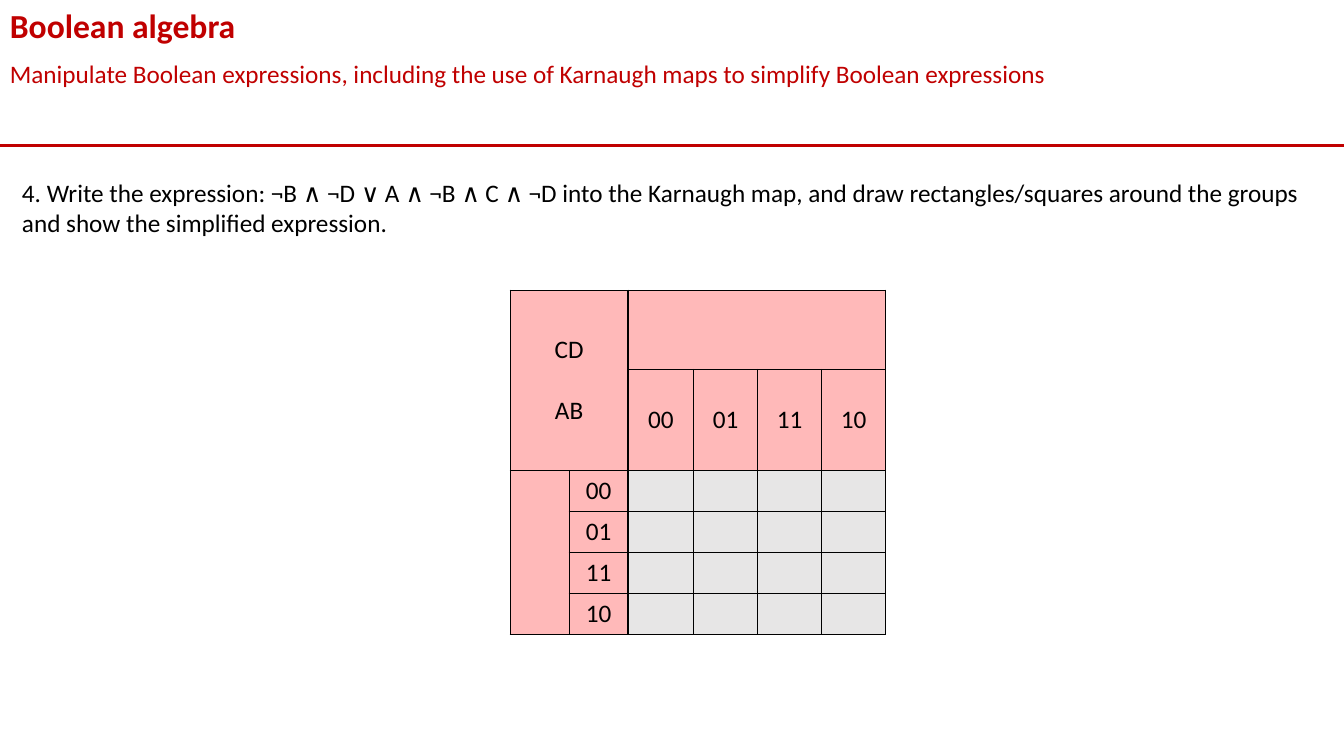
"""Build a Boolean algebra slide with an empty Karnaugh map to fill in."""
import pptx
import pptx.dml.color
import pptx.enum.shapes
import pptx.enum.text
import pptx.oxml
import pptx.util
from lxml import etree

COLUMNS, ROWS = 133.3, 75
UNIT = pptx.util.Inches(0.1)
RED, BLACK, PINK, GREY = "C00000", "000000", "FFB9B9", "E7E6E6"
GRAY_CODE = ["00", "01", "11", "10"]
COLUMN_WIDTHS = [5.85, 5.85, 6.5, 6.35, 6.35, 6.35]
ROW_HEIGHTS = [7.85, 10] + [4.06] * 4
HEADERS = 2
MERGES = [((0, 0), (1, 1)), ((0, 2), (0, 5)), ((2, 0), (5, 0))]
BODY = {"name": "Calibri", "size": pptx.util.Pt(18)}


def grid(count):
    """Turn a number of grid units into a length."""
    return pptx.util.Emu(round(count * UNIT))


def color(value):
    """Turn a hex string into a colour."""
    return pptx.dml.color.RGBColor.from_string(value)


def set_values(target, values):
    """Set each attribute named in the dict."""
    for name, value in values.items():
        setattr(target, name, value)


def write(paragraph, text, fill=BLACK, **formats):
    """Write formatted text in a paragraph."""
    run = paragraph.add_run()
    run.text = text
    set_values(run.font, {**BODY, **formats})
    run.font.color.rgb = color(fill)


def add_text(slide, text, left, top, width, height, **formats):
    """Add a wrapping text box measured in grid units."""
    box = slide.shapes.add_textbox(*map(grid, (left, top, width, height)))
    box.text_frame.word_wrap = True
    write(box.text_frame.paragraphs[0], text, **formats)


def add_rule(slide, top):
    """Add a red line across the whole slide."""
    line = slide.shapes.add_connector(
        pptx.enum.shapes.MSO_CONNECTOR.STRAIGHT, 0, grid(top), grid(COLUMNS), grid(top))
    line.line.color.rgb = color(RED)
    line.line.width = pptx.util.Pt(2.25)
    etree.SubElement(line._element.spPr, pptx.oxml.ns.qn("a:effectLst"))


def style_cell(cell, fill):
    """Give a cell black borders, a fill and centred text."""
    properties = cell._tc.get_or_add_tcPr()
    for side in ("lnL", "lnR", "lnT", "lnB"):
        border = etree.SubElement(
            properties, pptx.oxml.ns.qn(f"a:{side}"), w=str(pptx.util.Pt(1)))
        solid = etree.SubElement(border, pptx.oxml.ns.qn("a:solidFill"))
        etree.SubElement(solid, pptx.oxml.ns.qn("a:srgbClr"), val=BLACK)
    cell.fill.solid()
    cell.fill.fore_color.rgb = color(fill)
    cell.vertical_anchor = pptx.enum.text.MSO_ANCHOR.MIDDLE


def label_cell(cell, *lines):
    """Write centred lines in a cell, set one line apart."""
    frame = cell.text_frame
    for index, text in enumerate(lines):
        paragraph = frame.add_paragraph() if index else frame.paragraphs[0]
        paragraph.alignment = pptx.enum.text.PP_ALIGN.CENTER
        if index:
            paragraph.space_before = pptx.util.Pt(22)
        write(paragraph, text)


def add_karnaugh_map(slide, left, top):
    """Add the empty four by four map with its headings."""
    table = slide.shapes.add_table(
        len(ROW_HEIGHTS), len(COLUMN_WIDTHS), grid(left), grid(top),
        grid(sum(COLUMN_WIDTHS)), grid(sum(ROW_HEIGHTS))).table
    set_values(table, {"first_row": False, "horz_banding": False})
    for column, width in zip(table.columns, COLUMN_WIDTHS):
        column.width = grid(width)
    for row, height in zip(table.rows, ROW_HEIGHTS):
        row.height = grid(height)
    for row in range(len(ROW_HEIGHTS)):
        for column in range(len(COLUMN_WIDTHS)):
            style_cell(table.cell(row, column), PINK if min(row, column) < HEADERS else GREY)
    for first, last in MERGES:
        table.cell(*first).merge(table.cell(*last))
    label_cell(table.cell(0, 0), "CD", "AB")
    for index, code in enumerate(GRAY_CODE, HEADERS):
        label_cell(table.cell(1, index), code)
        label_cell(table.cell(index, 1), code)


def main():
    """Build the slide and save it."""
    presentation = pptx.Presentation()
    set_values(presentation, {"slide_width": grid(COLUMNS), "slide_height": grid(ROWS)})
    slide = presentation.slides.add_slide(presentation.slide_layouts[6])
    add_rule(slide, 14.4)
    add_text(slide, "Manipulate Boolean expressions, including the use of Karnaugh maps "
             "to simplify Boolean expressions", 0, 5.3, COLUMNS, 4, fill=RED)
    add_text(slide, "Boolean algebra", 0, 0, COLUMNS, 5,
             fill=RED, size=pptx.util.Pt(24), bold=True)
    add_text(slide, "4. Write the expression: ¬B ∧ ¬D ∨ A ∧ ¬B ∧ C ∧ ¬D into the Karnaugh map, "
             "and draw rectangles/squares around the groups and show the simplified expression.",
             1.2, 17.1, 130.7, 7.1)
    add_karnaugh_map(slide, 50.6, 28.8)
    presentation.save("out.pptx")


if __name__ == "__main__":
    main()
